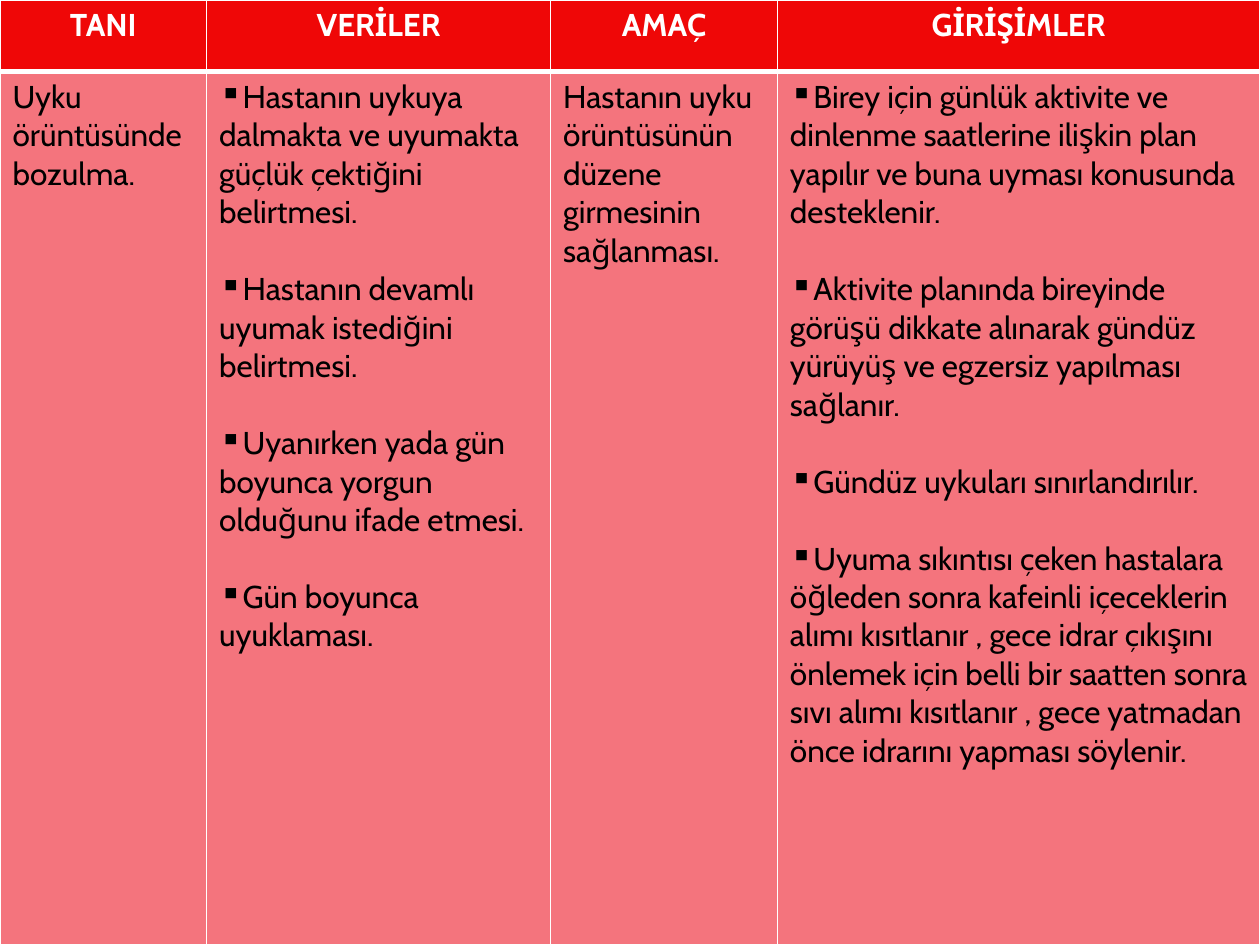
from lxml import etree
from pptx import Presentation
from pptx.dml.color import RGBColor
from pptx.enum import text
from pptx.oxml import ns
from pptx.util import Inches, Pt

# Header, bulleted or not, paragraphs
COLUMNS = [
    ("TANI", False, ["Uyku örüntüsünde bozulma."]),
    ("VERİLER", True, [
        "Hastanın uykuya dalmakta ve uyumakta güçlük çektiğini belirtmesi.",
        "Hastanın devamlı uyumak istediğini belirtmesi.",
        "Uyanırken yada gün boyunca yorgun olduğunu ifade etmesi.",
        "Gün boyunca uyuklaması.",
    ]),
    ("AMAÇ", False, ["Hastanın uyku örüntüsünün düzene girmesinin sağlanması."]),
    ("GİRİŞİMLER", True, [
        "Birey için günlük aktivite ve dinlenme saatlerine ilişkin plan yapılır "
        "ve buna uyması konusunda desteklenir.",
        "Aktivite planında bireyinde görüşü dikkate alınarak gündüz yürüyüş ve "
        "egzersiz yapılması sağlanır.",
        "Gündüz uykuları sınırlandırılır.",
        "Uyuma sıkıntısı çeken hastalara öğleden sonra kafeinli içeceklerin alımı "
        "kısıtlanır , gece idrar çıkışını önlemek için belli bir saatten sonra sıvı "
        "alımı kısıtlanır , gece yatmadan önce idrarını yapması söylenir.",
    ]),
]
WIDTHS = [1.64, 2.73, 1.8, 3.83]
HEIGHTS = [0.57, 6.93]
THEME = {
    "font": "Cabin", "size": 18, "gap": 22, "bullet": "▪",
    "header_fill": "EF0707", "header_text": "FFFFFF",
    "body_fill": "F4747D", "body_text": "000000",
    "border": "FFFFFF", "thin": 1, "thick": 3,
}


def add_child(parent, tag, **attributes):
    return etree.SubElement(parent, ns.qn(tag), attributes)


def set_borders(cell, **widths):
    """Draw the L, R, T and B edges, placed before the fill as the schema asks."""
    properties = cell._tc.get_or_add_tcPr()
    for index, side in enumerate("LRTB"):
        width = Pt(widths.get(side, THEME["thin"]))
        line = add_child(properties, f"a:ln{side}", w=str(width))
        add_child(add_child(line, "a:solidFill"), "a:srgbClr", val=THEME["border"])
        properties.insert(index, line)


def write(cell, paragraphs, *, color, bold=False, align=None, bullet=False):
    frame = cell.text_frame
    for index, content in enumerate(paragraphs):
        para = frame.add_paragraph() if index else frame.paragraphs[0]
        if index:
            para.space_before = Pt(THEME["gap"])
        if align is not None:
            para.alignment = align
        if bullet:
            properties = para._p.get_or_add_pPr()
            properties.set("marL", "0")
            properties.set("indent", "0")
            add_child(properties, "a:buChar", char=THEME["bullet"])
        span = para.add_run()
        span.text = content
        span.font.name = THEME["font"]
        span.font.size = Pt(THEME["size"])
        span.font.bold = bold
        span.font.color.rgb = RGBColor.from_string(color)


def fill_cell(cell, color):
    cell.fill.solid()
    cell.fill.fore_color.rgb = RGBColor.from_string(color)


def main():
    deck = Presentation()
    deck.slide_width, deck.slide_height = Inches(10), Inches(7.5)
    page = deck.slides.add_slide(deck.slide_layouts[6])
    table = page.shapes.add_table(len(HEIGHTS), len(COLUMNS), 0, 0,
                                  deck.slide_width, deck.slide_height).table
    for row, height in zip(table.rows, HEIGHTS):
        row.height = Inches(height)

    for index, (title, bulleted, paragraphs) in enumerate(COLUMNS):
        table.columns[index].width = Inches(WIDTHS[index])
        header, body = table.cell(0, index), table.cell(1, index)
        fill_cell(header, THEME["header_fill"])
        fill_cell(body, THEME["body_fill"])
        set_borders(header, B=THEME["thick"])
        set_borders(body, T=THEME["thick"])
        write(header, [title], color=THEME["header_text"], bold=True,
              align=text.PP_ALIGN.CENTER)
        write(body, paragraphs, color=THEME["body_text"], bullet=bulleted)

    deck.save("out.pptx")


if __name__ == "__main__":
    main()
